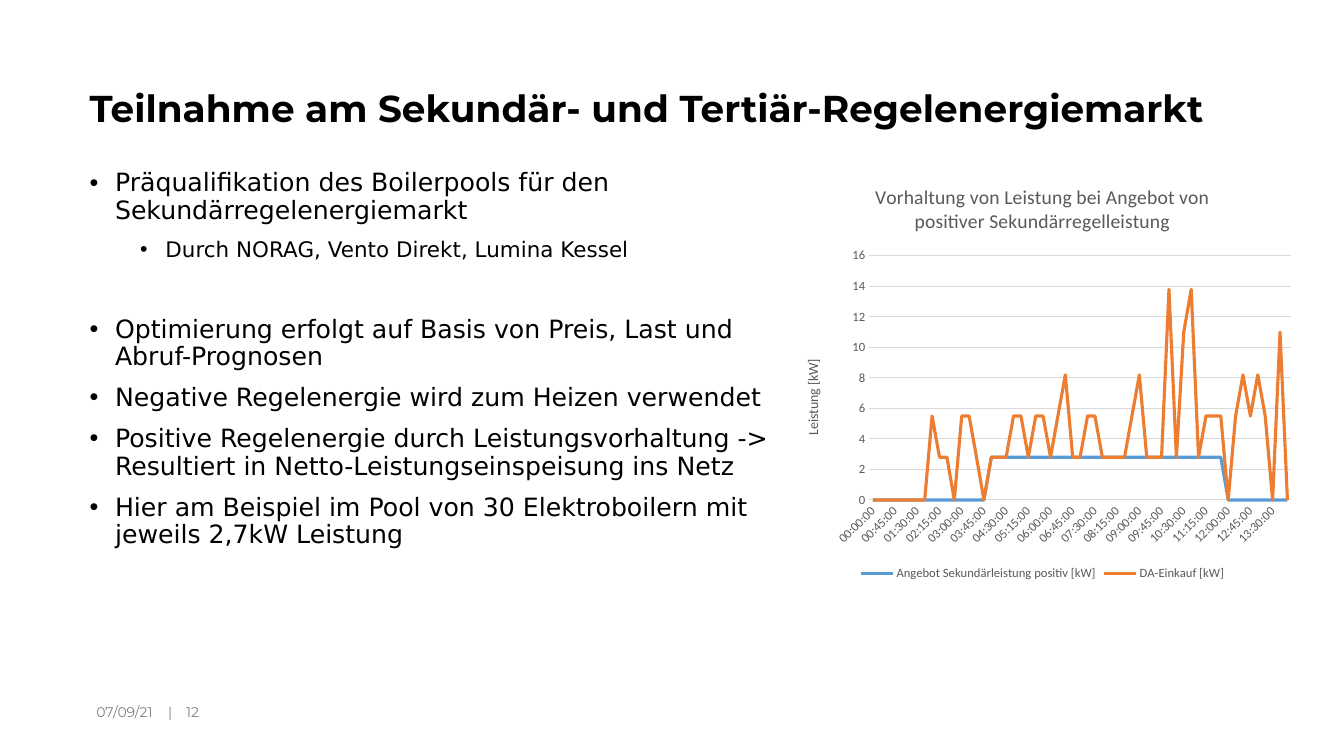
from pptx import Presentation
from pptx import util as u
from pptx.chart.data import CategoryChartData
from pptx.dml.color import RGBColor
from pptx.enum import chart as c, text as t
from pptx.oxml.ns import qn
from lxml import etree


def style(font, size, color, name, bold=False):
    font.size = u.Pt(size)
    font.name = name
    font.bold = bold
    font.color.rgb = RGBColor.from_string(color)


def add_box(left, top, width, height, anchor, inset_x, inset_y):
    frame = page.shapes.add_textbox(u.Cm(left), u.Cm(top), u.Cm(width), u.Cm(height)).text_frame
    frame.word_wrap = True
    frame.vertical_anchor = anchor
    frame.margin_left = frame.margin_right = u.Cm(inset_x)
    frame.margin_top = frame.margin_bottom = u.Cm(inset_y)
    return frame


deck = Presentation()
deck.slide_width = u.Cm(33.87)
deck.slide_height = u.Cm(19.05)
page = deck.slides.add_slide(deck.slide_layouts[6])

footer = add_box(2.18, 17.65, 10.59, 0.58, t.MSO_ANCHOR.MIDDLE, 0.25, 0)
para = footer.paragraphs[0]
for index, part in enumerate(["07/09/21", "|", "12"]):
    span = para.add_run()
    span.text = part if index == 0 else "\t" + part
    style(span.font, 10, "808080", "Montserrat")
tabs = etree.SubElement(para._p.get_or_add_pPr(), qn("a:tabLst"))
for position in (1.81, 2.26):
    etree.SubElement(tabs, qn("a:tab"), pos=str(u.Cm(position)), algn="l")

title = add_box(2.08, 1.96, 29.79, 1.63, t.MSO_ANCHOR.MIDDLE, 0.18, 0.1)
para = title.paragraphs[0]
para.line_spacing = 0.9
span = para.add_run()
span.text = "Teilnahme am Sekundär- und Tertiär-Regelenergiemarkt"
style(span.font, 26.7, "000000", "Montserrat", True)

points = [
    (0, 0, "Präqualifikation des Boilerpools für den Sekundärregelenergiemarkt"),
    (1, 10, "Durch NORAG, Vento Direkt, Lumina Kessel"),
    (0, 39, "Optimierung erfolgt auf Basis von Preis, Last und Abruf-Prognosen"),
    (0, 10, "Negative Regelenergie wird zum Heizen verwendet"),
    (0, 10, "Positive Regelenergie durch Leistungsvorhaltung -> "
            "Resultiert in Netto-Leistungseinspeisung ins Netz"),
    (0, 10, "Hier am Beispiel im Pool von 30 Elektroboilern mit jeweils 2,7kW Leistung"),
]
body = add_box(2.08, 4.19, 17.65, 10.54, t.MSO_ANCHOR.TOP, 0.18, 0.1)
for index, (level, gap, wording) in enumerate(points):
    para = body.add_paragraph() if index else body.paragraphs[0]
    para.level = level
    para.line_spacing = 0.9
    para.space_before = u.Pt(gap)
    properties = para._p.get_or_add_pPr()
    properties.set("marL", str(u.Cm(0.64 + 1.27 * level)))
    properties.set("indent", str(u.Cm(-0.64)))
    etree.SubElement(properties, qn("a:buFont"), typeface="Arial")
    etree.SubElement(properties, qn("a:buChar"), char="•")
    span = para.add_run()
    span.text = wording
    style(span.font, 15.3 if level else 18, "000000", "DejaVu Sans")

offer = [0] * 16 + [2.8] * 32 + [0] * 9
purchase = [
    0, 0, 0, 0, 0, 0, 0, 0, 5.5, 2.8, 2.8, 0, 5.5, 5.5, 2.8, 0, 2.8, 2.8, 2.8,
    5.5, 5.5, 2.8, 5.5, 5.5, 2.8, 5.5, 8.2, 2.8, 2.8, 5.5, 5.5, 2.8, 2.8, 2.8,
    2.8, 5.5, 8.2, 2.8, 2.8, 2.8, 13.8, 2.8, 11, 13.8, 2.8, 5.5, 5.5, 5.5, 0,
    5.5, 8.2, 5.5, 8.2, 5.5, 0, 11, 0,
]
data = CategoryChartData()
data.categories = [f"{step // 4:02}:{step % 4 * 15:02}:00" for step in range(len(purchase))]
data.add_series("Angebot Sekundärleistung positiv [kW]", offer)
data.add_series("DA-Einkauf [kW]", purchase)
chart = page.shapes.add_chart(
    c.XL_CHART_TYPE.LINE, u.Cm(19.74), u.Cm(4.19), u.Cm(13.06), u.Cm(10.54), data).chart
style(chart.font, 10, "000000", "Calibri")

times, power = chart.category_axis, chart.value_axis
for holder, wording, size in (
        (chart, "Vorhaltung von Leistung bei Angebot von positiver Sekundärregelleistung", 14),
        (power, "Leistung [kW]", 10)):
    holder.has_title = True
    heading = (chart.chart_title if holder is chart else power.axis_title).text_frame
    span = heading.paragraphs[0].add_run()
    span.text = wording
    style(span.font, size, "595959", "Calibri")
heading._txBody.bodyPr.set("rot", "-5400000")
heading._txBody.bodyPr.set("vert", "horz")

for axis in (times, power):
    axis.major_tick_mark = axis.minor_tick_mark = c.XL_TICK_MARK.NONE
    style(axis.tick_labels.font, 9, "595959", "Calibri")
times._element.txPr.bodyPr.set("rot", "-2700000")
power.minimum_scale, power.maximum_scale, power.major_unit = 0, 16, 2
power.format.line.fill.background()
for line in (times.format.line, power.major_gridlines.format.line):
    line.color.rgb = RGBColor.from_string("D9D9D9")
    line.width = u.Pt(0.75)

chart.has_legend = True
chart.legend.position = c.XL_LEGEND_POSITION.BOTTOM
chart.legend.include_in_layout = False
style(chart.legend.font, 9, "595959", "Calibri")

chart.plots[0].vary_by_categories = False
for series, color in zip(chart.plots[0].series, ("5B9BD5", "ED7D31")):
    series.smooth = False
    series.marker.style = c.XL_MARKER_STYLE.NONE
    series.format.line.color.rgb = RGBColor.from_string(color)
    series.format.line.width = u.Pt(2.25)

deck.save("out.pptx")
